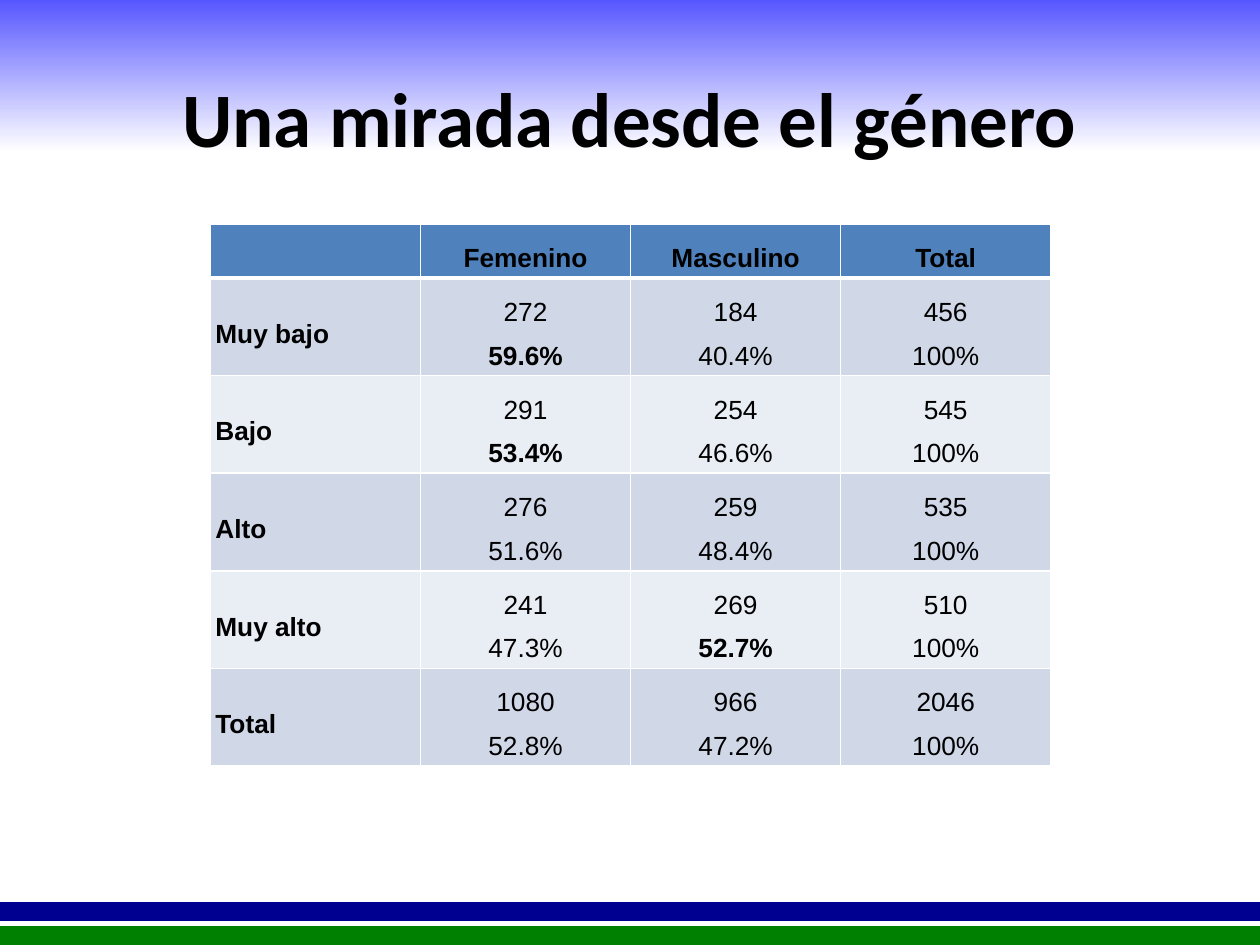
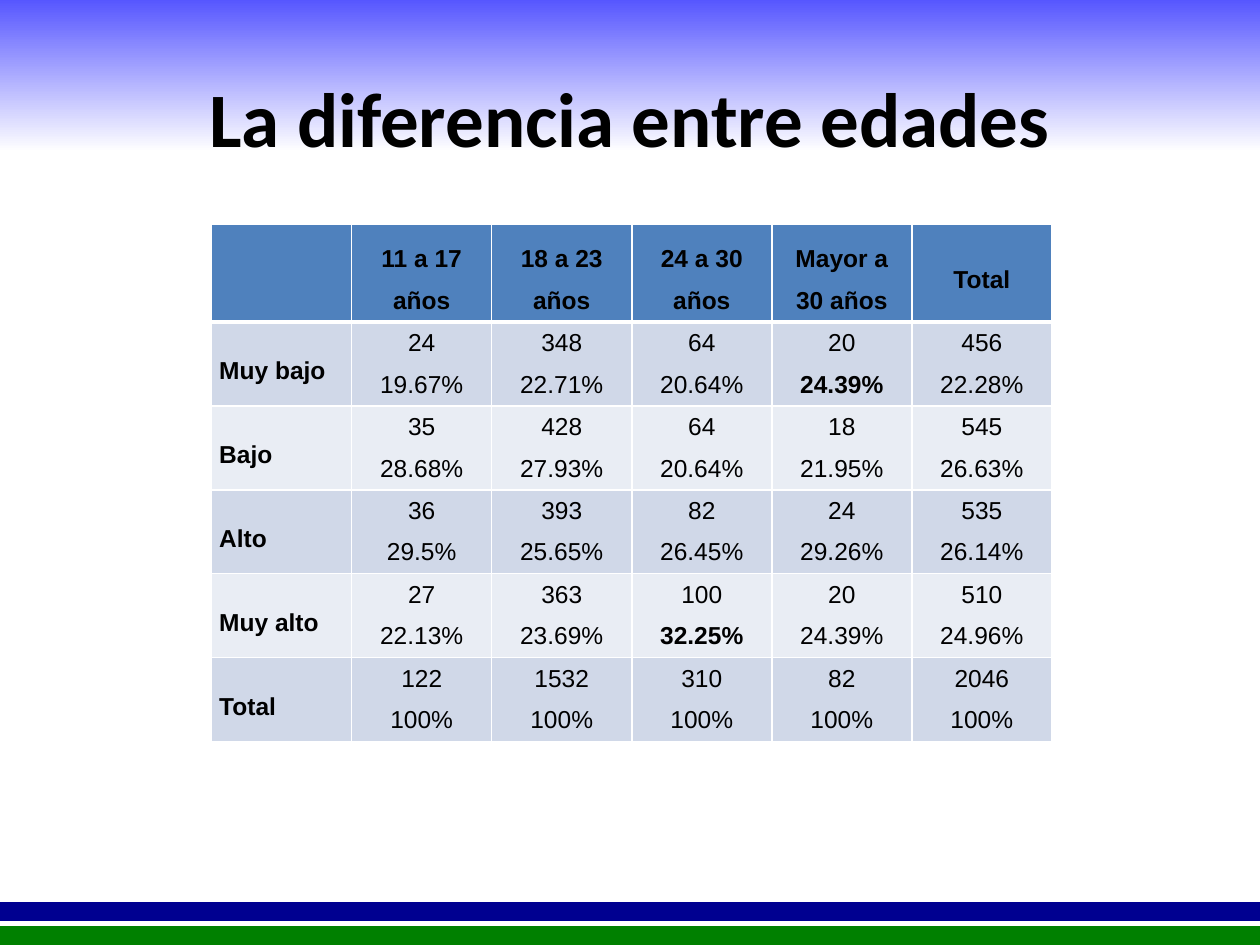
from lxml.etree import SubElement
from pptx import Presentation
from pptx.dml.color import RGBColor
from pptx.enum.shapes import MSO_SHAPE
from pptx.enum.text import MSO_ANCHOR, PP_ALIGN
from pptx.oxml.ns import qn
from pptx.util import Inches, Pt

COLORS = {
    "text": "000000",
    "border": "FFFFFF",
    "header": "4F81BD",
    "odd_row": "D0D8E8",
    "even_row": "E9EDF4",
    "navy": "000090",
    "green": "008000",
    "glow": "0000FF",
    "paper": "FFFFFF",
}
TITLE_FONT = {"name": "Calibri", "size": Pt(44), "bold": True}
TITLE_PLACE = {"left": Inches(0.5), "top": Inches(0.3),
               "width": Inches(9), "height": Inches(1.25)}
TITLE_ONLY = 5
TABLE_TOP, TABLE_WIDTH = 1.78, 6.67

GENDER = {
    "title": "Una mirada desde el género",
    "columns": ["Femenino", "Masculino", "Total"],
    "rows": {
        "Muy bajo": [("272", "59.6%"), ("184", "40.4%"), ("456", "100%")],
        "Bajo": [("291", "53.4%"), ("254", "46.6%"), ("545", "100%")],
        "Alto": [("276", "51.6%"), ("259", "48.4%"), ("535", "100%")],
        "Muy alto": [("241", "47.3%"), ("269", "52.7%"), ("510", "100%")],
        "Total": [("1080", "52.8%"), ("966", "47.2%"), ("2046", "100%")],
    },
    "highlights": {("Muy bajo", "Femenino"), ("Bajo", "Femenino"),
                   ("Muy alto", "Masculino")},
    "left": 1.67, "header_height": 0.42, "row_height": 0.77,
    "size": 15, "margin": 0.04, "count_spacing": 1.5,
}
AGE = {
    "title": "La diferencia entre edades",
    "columns": ["11 a 17 años", "18 a 23 años", "24 a 30 años",
                "Mayor a 30 años", "Total"],
    "rows": {
        "Muy bajo": [("24", "19.67%"), ("348", "22.71%"), ("64", "20.64%"),
                     ("20", "24.39%"), ("456", "22.28%")],
        "Bajo": [("35", "28.68%"), ("428", "27.93%"), ("64", "20.64%"),
                 ("18", "21.95%"), ("545", "26.63%")],
        "Alto": [("36", "29.5%"), ("393", "25.65%"), ("82", "26.45%"),
                 ("24", "29.26%"), ("535", "26.14%")],
        "Muy alto": [("27", "22.13%"), ("363", "23.69%"), ("100", "32.25%"),
                     ("20", "24.39%"), ("510", "24.96%")],
        "Total": [("122", "100%"), ("1532", "100%"), ("310", "100%"),
                  ("82", "100%"), ("2046", "100%")],
    },
    "highlights": {("Muy bajo", "Mayor a 30 años"),
                   ("Muy alto", "24 a 30 años")},
    "left": 1.68, "header_height": 0.75, "row_height": 0.65,
    "size": 14, "margin": 0.06, "count_spacing": None,
}


def color(name):
    return RGBColor.from_string(COLORS[name])


def set_all(target, values):
    for name, value in values.items():
        setattr(target, name, value)


def add_band(page, top, height):
    band = page.shapes.add_shape(MSO_SHAPE.RECTANGLE, 0, Inches(top),
                                 Inches(10), Inches(height))
    band.shadow.inherit = False
    band.line.fill.background()
    return band


def add_layout_bands(page):
    """Draw the bands on a page, then move them behind its layout's content."""
    glow = add_band(page, -0.62, 2.37)
    glow.fill.gradient()
    glow.fill.gradient_angle = 270
    stops = (("glow", 0), ("paper", 0.77))
    for stop, (name, position) in zip(glow.fill.gradient_stops, stops):
        stop.color.rgb = color(name)
        stop.position = position
    bands = [glow]
    for name, top in (("navy", 7.16), ("green", 7.35)):
        band = add_band(page, top, 0.15)
        band.fill.solid()
        band.fill.fore_color.rgb = color(name)
        bands.append(band)
    for number, band in enumerate(bands):
        band.element.nvSpPr.cNvPr.set("id", str(101 + number))
        page.slide_layout.shapes.element.insert(2 + number, band.element)


def add_title(page, text):
    title = page.shapes.title
    set_all(title, TITLE_PLACE)
    title.text_frame.text = text
    title.text_frame.vertical_anchor = MSO_ANCHOR.MIDDLE
    para = title.text_frame.paragraphs[0]
    para.alignment = PP_ALIGN.CENTER
    set_all(para.font, TITLE_FONT)
    para.font.color.rgb = color("text")


def set_borders(cell, row):
    """White lines, with a thicker one under the header row."""
    properties = cell._tc.get_or_add_tcPr()
    widths = {"L": 1, "R": 1, "T": 3 if row == 1 else 1, "B": 3 if row == 0 else 1}
    for side, width in widths.items():
        line = SubElement(properties, qn(f"a:ln{side}"), w=str(Pt(width)))
        fill = SubElement(line, qn("a:solidFill"))
        SubElement(fill, qn("a:srgbClr"), val=COLORS["border"])


def fill_cell(cell, lines, survey, alignment=PP_ALIGN.CENTER):
    """Write (text, bold, line spacing) tuples, one paragraph each."""
    margin = Inches(survey["margin"])
    set_all(cell, {f"margin_{side}": margin
                   for side in ("left", "top", "right", "bottom")})
    cell.vertical_anchor = MSO_ANCHOR.MIDDLE
    cell.text = "\n".join(text for text, _, _ in lines)
    for para, (_, bold, spacing) in zip(cell.text_frame.paragraphs, lines):
        set_all(para, {"alignment": alignment, "line_spacing": spacing})
        set_all(para.font, {"name": "Arial", "size": Pt(survey["size"]), "bold": bold})
        para.font.color.rgb = color("text")


def add_survey_table(page, survey):
    columns, rows = survey["columns"], survey["rows"]
    height = survey["header_height"] + survey["row_height"] * len(rows)
    table = page.shapes.add_table(
        len(rows) + 1, len(columns) + 1, Inches(survey["left"]),
        Inches(TABLE_TOP), Inches(TABLE_WIDTH), Inches(height)).table
    for index, row in enumerate(table.rows):
        row.height = Inches(survey["row_height" if index else "header_height"])
        shade = "header" if index == 0 else "odd_row" if index % 2 else "even_row"
        for cell in row.cells:
            set_borders(cell, index)
            cell.fill.solid()
            cell.fill.fore_color.rgb = color(shade)

    for column, heading in enumerate(columns, 1):
        fill_cell(table.cell(0, column), [(heading, True, 1.5)], survey)
    for row, (level, values) in enumerate(rows.items(), 1):
        fill_cell(table.cell(row, 0), [(level, True, 1.5)], survey, PP_ALIGN.JUSTIFY)
        for column, (count, percent) in enumerate(values, 1):
            bold = (level, columns[column - 1]) in survey["highlights"]
            # The totals row is evenly spaced in both tables.
            spacing = survey["count_spacing"]
            lines = [(count, False, spacing), (percent, bold, 1.5)]
            fill_cell(table.cell(row, column), lines, survey)


def main():
    deck = Presentation()
    deck.slide_width, deck.slide_height = Inches(10), Inches(7.5)
    for survey in (GENDER, AGE):
        page = deck.slides.add_slide(deck.slide_layouts[TITLE_ONLY])
        if len(deck.slides) == 1:
            add_layout_bands(page)
        add_title(page, survey["title"])
        add_survey_table(page, survey)
    deck.save("out.pptx")


if __name__ == "__main__":
    main()
